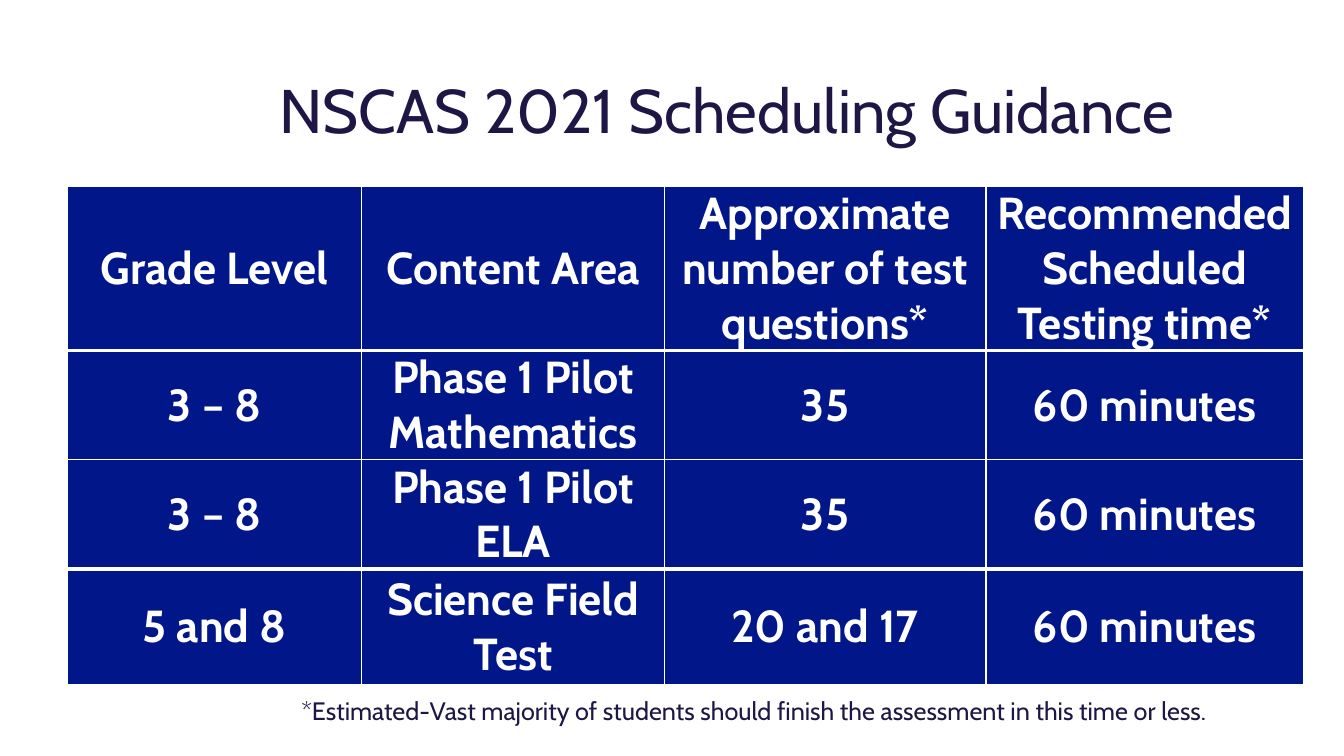
from dataclasses import dataclass

import lxml.etree
import pptx
import pptx.dml.color
import pptx.enum.text
import pptx.oxml.ns
import pptx.util

NAVY = pptx.dml.color.RGBColor(0x1F, 0x16, 0x46)
BLUE = pptx.dml.color.RGBColor(0x00, 0x16, 0x89)
WHITE = pptx.dml.color.RGBColor(0xFF, 0xFF, 0xFF)
FONT = "Cabin"
SLIDE_W = pptx.util.Inches(13.33)
SLIDE_H = pptx.util.Inches(7.5)
THIN, THICK = 1, 3  # rule widths in points
ANCHOR = pptx.enum.text.MSO_ANCHOR
ALIGN = pptx.enum.text.PP_ALIGN


@dataclass(frozen=True)
class Label:
    """Text box placed in percent of the slide's width and height."""
    left: float
    top: float
    width: float
    height: float
    text: str
    size: int
    anchor: ANCHOR
    line_spacing: float = 1.0


@dataclass(frozen=True)
class Row:
    """Table row; its height is in percent of the slide's height."""
    height: float
    cells: tuple[str, ...]
    top_rule: int = THIN
    bottom_rule: int = THIN


LABELS = (
    Label(20.03, 5.33, 73.14, 19.33, "NSCAS 2021 Scheduling Guidance", 44,
          ANCHOR.MIDDLE, 0.9),
    Label(21.68, 91.33, 77.19, 5.33,
          "*Estimated-Vast majority of students should finish the assessment "
          "in this time or less.", 18, ANCHOR.TOP),
)
TABLE_LEFT, TABLE_TOP = 5.03, 24.67
COLUMNS = (21.9, 22.5, 23.93, 23.63)
ROWS = (
    Row(21.6, ("Grade Level", "Content Area",
               "Approximate number of test questions*",
               "Recommended Scheduled Testing time*"), bottom_rule=THICK),
    Row(14.4, ("3 – 8", "Phase 1 Pilot\nMathematics", "35", "60 minutes"),
        top_rule=THICK),
    Row(14.4, ("3 – 8", "Phase 1 Pilot\nELA", "35", "60 minutes"),
        bottom_rule=THICK),
    Row(15.33, ("5 and 8", "Science Field Test", "20 and 17", "60 minutes"),
        top_rule=THICK),
)


def across(percent: float) -> int:
    return round(SLIDE_W * percent / 100)


def down(percent: float) -> int:
    return round(SLIDE_H * percent / 100)


def add_run(p, text: str, size: int, color, bold: bool = False) -> None:
    r = p.add_run()
    r.text = text
    r.font.name = FONT
    r.font.size = pptx.util.Pt(size)
    r.font.bold = bold
    r.font.color.rgb = color


def add_label(s, label: Label) -> None:
    sp = s.shapes.add_textbox(across(label.left), down(label.top),
                              across(label.width), down(label.height))
    tf = sp.text_frame
    tf.word_wrap = True
    tf.vertical_anchor = label.anchor
    p = tf.paragraphs[0]
    p.line_spacing = label.line_spacing
    add_run(p, label.text, label.size, NAVY)


def add_rules(cell, row: Row) -> None:
    tc_pr = cell._tc.get_or_add_tcPr()
    qn = pptx.oxml.ns.qn
    rules = (("a:lnL", THIN), ("a:lnR", THIN),
             ("a:lnT", row.top_rule), ("a:lnB", row.bottom_rule))
    for tag, width in rules:
        ln = lxml.etree.SubElement(tc_pr, qn(tag), w=str(pptx.util.Pt(width)))
        fill = lxml.etree.SubElement(ln, qn("a:solidFill"))
        lxml.etree.SubElement(fill, qn("a:srgbClr"), val=str(WHITE))


def fill_cell(cell, text: str, row: Row) -> None:
    # Rules come before the fill in the cell's properties
    add_rules(cell, row)
    cell.fill.solid()
    cell.fill.fore_color.rgb = BLUE
    cell.vertical_anchor = ANCHOR.MIDDLE
    cell.margin_left = cell.margin_right = 0
    cell.margin_top = cell.margin_bottom = 0
    tf = cell.text_frame
    for i, line in enumerate(text.split("\n")):
        p = tf.add_paragraph() if i else tf.paragraphs[0]
        p.alignment = ALIGN.CENTER
        add_run(p, line, 32, WHITE, bold=True)


def add_schedule(s) -> None:
    table = s.shapes.add_table(
        len(ROWS), len(COLUMNS), across(TABLE_LEFT), down(TABLE_TOP),
        across(sum(COLUMNS)), down(sum(row.height for row in ROWS))).table
    for column, width in zip(table.columns, COLUMNS):
        column.width = across(width)
    for i, row in enumerate(ROWS):
        table.rows[i].height = down(row.height)
        for j, text in enumerate(row.cells):
            fill_cell(table.cell(i, j), text, row)


def main() -> None:
    prs = pptx.Presentation()
    prs.slide_width, prs.slide_height = SLIDE_W, SLIDE_H
    s = prs.slides.add_slide(prs.slide_layouts[6])
    # Schedule table
    add_schedule(s)
    # Title and footnote
    for label in LABELS:
        add_label(s, label)
    prs.save("out.pptx")


if __name__ == "__main__":
    main()
